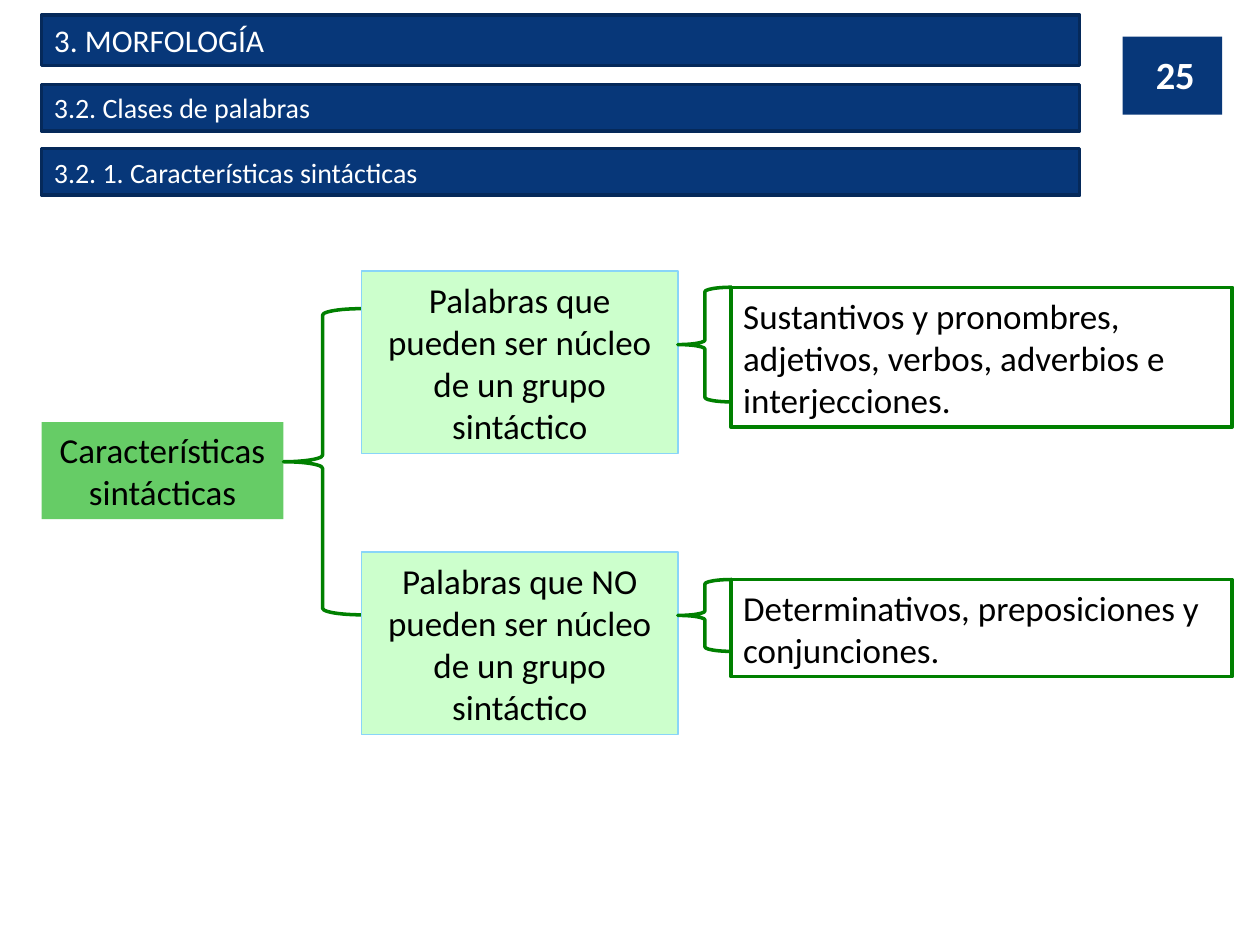
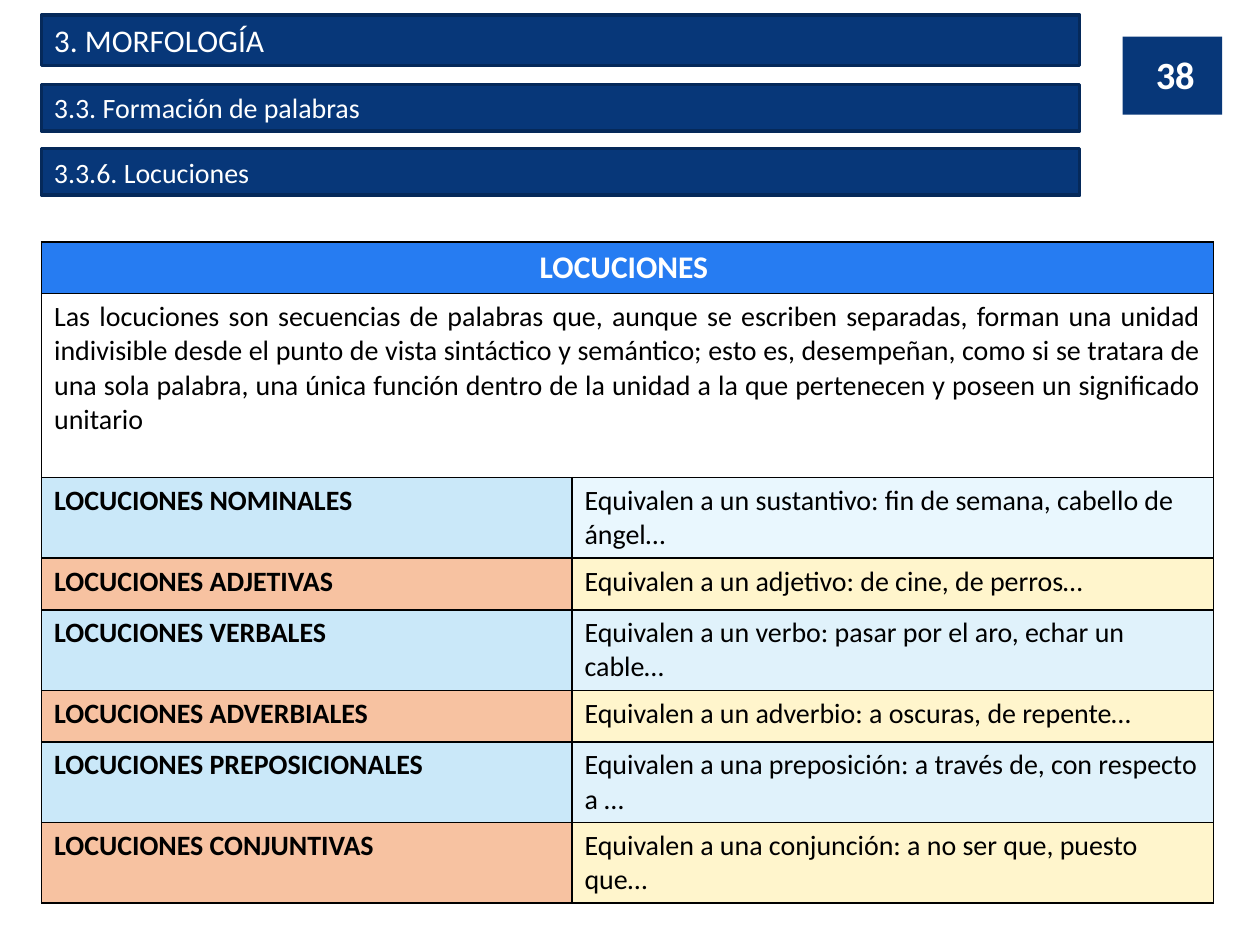
from lxml.etree import SubElement
from pptx import Presentation
from pptx.dml.color import RGBColor
from pptx.enum.shapes import MSO_SHAPE
from pptx.enum.text import MSO_ANCHOR, PP_ALIGN
from pptx.oxml.ns import qn
from pptx.util import Inches, Pt

NAVY, NAVY_EDGE, WHITE, BLACK = "073779", "05295A", "FFFFFF", "000000"
GREEN, PALE_GREEN, DARK_GREEN, SKY = "66CC66", "CCFFCC", "008000", "89D5F8"
BLUE, LIGHT_BLUE, ORANGE, CREAM = "267CF2", "CAE8F9", "F7C2A1", "FFF5CC"
LEFT = 0.33


def color(value):
    return RGBColor.from_string(value)


def write(frame, text, size=20, ink=BLACK, bold=False, align=PP_ALIGN.LEFT):
    """Fill a text frame; each line of the text becomes a paragraph."""
    frame.word_wrap = True
    for index, line in enumerate(text.split("\n")):
        para = frame.add_paragraph() if index else frame.paragraphs[0]
        para.alignment = align
        span = para.add_run()
        span.text = line
        span.font.name = "Calibri"
        span.font.size = Pt(size)
        span.font.bold = bold
        span.font.color.rgb = color(ink)


class Deck:
    def __init__(self):
        self.file = Presentation()
        self.file.slide_width = Inches(10)
        self.file.slide_height = Inches(7.5)
        self.page = None

    def shape(self, kind, place, fill=None, line=None, width=2):
        shape = self.page.shapes.add_shape(kind, *map(Inches, place))
        shape.shadow.inherit = False
        if fill:
            shape.fill.solid()
            shape.fill.fore_color.rgb = color(fill)
        else:
            shape.fill.background()
        if line:
            shape.line.color.rgb = color(line)
            shape.line.width = Pt(width)
        else:
            shape.line.fill.background()
        return shape

    def box(self, place, text, fill, line=None, width=2, **style):
        box = self.shape(MSO_SHAPE.RECTANGLE, place, fill, line, width)
        write(box.text_frame, text, **style)

    def brace(self, *place):
        self.shape(MSO_SHAPE.LEFT_BRACE, place, line=DARK_GREEN)

    def start_page(self, number, section, topic):
        """Add a page with its number block and three heading bars."""
        self.page = self.file.slides.add_slide(self.file.slide_layouts[6])
        self.shape(MSO_SHAPE.RECTANGLE, (8.91, 0.29, 0.79, 0.62), NAVY)
        bars = [("3. MORFOLOGÍA", 0.12, 0.4, 18), (section, 0.67, 0.37, 16),
                (topic, 1.18, 0.37, 16)]
        for text, top, height, size in bars:
            self.box((LEFT, top, 8.24, height), text, NAVY, NAVY_EDGE,
                     size=size, ink=WHITE)
        label = self.page.shapes.add_textbox(*map(Inches, (9.03, 0.39, 0.55, 0.4)))
        label.text_frame.vertical_anchor = MSO_ANCHOR.MIDDLE
        write(label.text_frame, number, size=22, ink=WHITE, bold=True,
              align=PP_ALIGN.RIGHT)

    def table(self, left, top, widths, heights):
        frame = self.page.shapes.add_table(
            len(heights), len(widths), Inches(left), Inches(top),
            Inches(sum(widths)), Inches(sum(heights)))
        table = frame.table
        table.first_row = table.horz_banding = False
        for column, width in zip(table.columns, widths):
            column.width = Inches(width)
        for row, height in zip(table.rows, heights):
            row.height = Inches(height)
        for cell in table.iter_cells():
            self.border(cell)
        return table

    def border(self, cell):
        properties = cell._tc.get_or_add_tcPr()
        for side in ("a:lnL", "a:lnR", "a:lnT", "a:lnB"):
            edge = SubElement(properties, qn(side), w=str(Pt(1)))
            fill = SubElement(edge, qn("a:solidFill"))
            SubElement(fill, qn("a:srgbClr"), val=BLACK)

    def cell(self, cell, text, fill, size=16, **style):
        cell.fill.solid()
        cell.fill.fore_color.rgb = color(fill)
        write(cell.text_frame, text, size=size, **style)


def syntax_page(deck):
    deck.start_page("25", "3.2. Clases de palabras",
                    "3.2. 1. Características sintácticas")
    # Root of the tree
    deck.box((LEFT, 3.35, 1.92, 0.77), "Características\nsintácticas", GREEN,
             align=PP_ALIGN.CENTER)
    deck.brace(2.25, 2.45, 0.62, 2.43)
    # Branches: group top, leaf top, leaf height, brace height
    branches = [
        ("Palabras que pueden ser núcleo de un grupo sintáctico",
         "Sustantivos y pronombres, adjetivos, verbos, adverbios e interjecciones.",
         2.15, 2.28, 1.11, 0.91),
        ("Palabras que NO pueden ser núcleo de un grupo sintáctico",
         "Determinativos, preposiciones y conjunciones.",
         4.38, 4.6, 0.77, 0.57),
    ]
    for group, words, group_top, top, height, brace_height in branches:
        deck.box((2.87, group_top, 2.51, 1.45), group, PALE_GREEN, SKY, 1,
                 align=PP_ALIGN.CENTER)
        deck.brace(5.38, top, 0.43, brace_height)
        deck.box((5.8, top, 3.98, height), words, WHITE, DARK_GREEN)


def phrases_page(deck):
    deck.start_page("38", "3.3. Formación de palabras", "3.3.6. Locuciones")
    one_line, two_lines = 0.41, 0.64
    kinds = [
        ("NOMINALES", "un sustantivo: fin de semana, cabello de ángel…",
         two_lines, "E9F7FE"),
        ("ADJETIVAS", "un adjetivo: de cine, de perros…", one_line, CREAM),
        ("VERBALES", "un verbo: pasar por el aro, echar un cable…",
         two_lines, "E0F2FB"),
        ("ADVERBIALES", "un adverbio: a oscuras, de repente…", one_line, CREAM),
        ("PREPOSICIONALES", "una preposición: a través de, con respecto a …",
         two_lines, "E0F2FB"),
        ("CONJUNTIVAS", "una conjunción: a no ser que, puesto que…",
         two_lines, CREAM),
    ]
    heights = [one_line, 1.46] + [kind[2] for kind in kinds]
    table = deck.table(LEFT, 1.92, [4.21, 5.09], heights)
    # Title and definition span both columns
    for row in range(2):
        table.cell(row, 0).merge(table.cell(row, 1))
    deck.cell(table.cell(0, 0), "LOCUCIONES ", BLUE, size=18, ink=WHITE,
              bold=True, align=PP_ALIGN.CENTER)
    deck.cell(table.cell(1, 0),
              "Las locuciones son secuencias de palabras que, aunque se escriben "
              "separadas, forman una unidad indivisible desde el punto de vista "
              "sintáctico y semántico; esto es, desempeñan, como si se tratara de "
              "una sola palabra, una única función dentro de la unidad a la que "
              "pertenecen y poseen un significado unitario",
              WHITE, align=PP_ALIGN.JUSTIFY)
    # One row for each kind, in alternating colours
    for index, (name, meaning, _, tint) in enumerate(kinds):
        row = index + 2
        deck.cell(table.cell(row, 0), f"LOCUCIONES {name}",
                  ORANGE if index % 2 else LIGHT_BLUE, bold=True)
        deck.cell(table.cell(row, 1), f"Equivalen a {meaning}", tint)


def main():
    deck = Deck()
    syntax_page(deck)
    phrases_page(deck)
    deck.file.save("out.pptx")


if __name__ == "__main__":
    main()
